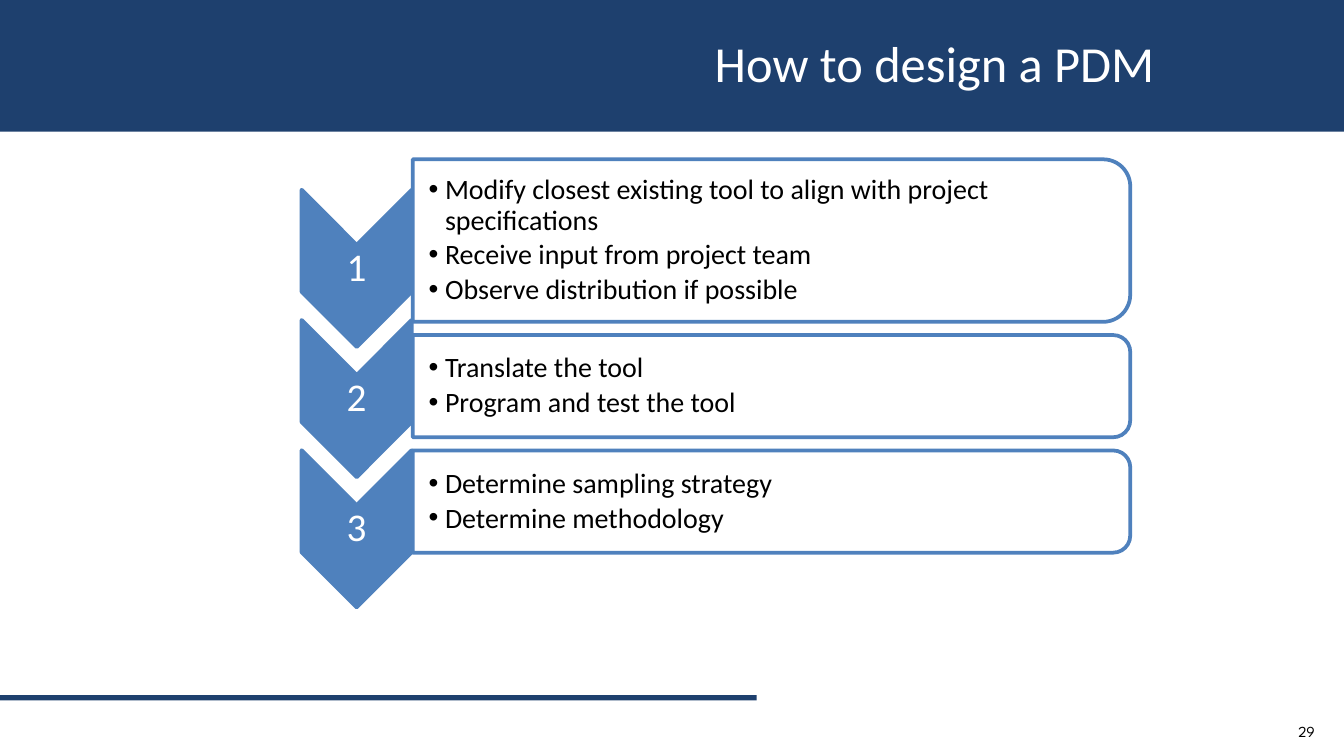
from dataclasses import dataclass
from typing import Any

import lxml.etree
import pptx
import pptx.dml.color
import pptx.enum.shapes
import pptx.enum.text
import pptx.oxml.ns
import pptx.util

NAVY = pptx.dml.color.RGBColor(0x1E, 0x40, 0x6E)
BLUE = pptx.dml.color.RGBColor(0x4F, 0x81, 0xBD)
WHITE = pptx.dml.color.RGBColor(0xFF, 0xFF, 0xFF)
BLACK = pptx.dml.color.RGBColor(0, 0, 0)

Cm = pptx.util.Cm
Pt = pptx.util.Pt
SHAPES = pptx.enum.shapes.MSO_SHAPE
ALIGN = pptx.enum.text.PP_ALIGN
ANCHOR = pptx.enum.text.MSO_ANCHOR
AUTO_SIZE = pptx.enum.text.MSO_AUTO_SIZE

TITLE_FONT = {"name": "Calibri", "size": Pt(27), "bold": False}
NUMBER_FONT = {"name": "Calibri", "size": Pt(21)}
LIST_FONT = {"name": "Calibri", "size": Pt(15), "bold": False}
PAGE_FONT = {"name": "League Spartan", "size": Pt(8.2)}
TITLE_FRAME = {
    "word_wrap": True, "vertical_anchor": ANCHOR.TOP,
    "auto_size": AUTO_SIZE.SHAPE_TO_FIT_TEXT,
}
PAGE_FRAME = {"word_wrap": True, "vertical_anchor": ANCHOR.MIDDLE}
LIST_FRAME = {
    "word_wrap": True, "auto_size": AUTO_SIZE.NONE, "vertical_anchor": ANCHOR.MIDDLE,
    "margin_left": Cm(0.3), "margin_right": Cm(0.03),
    "margin_top": Cm(0.03), "margin_bottom": Cm(0.03),
}
NUMBER_FRAME = {**LIST_FRAME, "margin_left": Cm(0.03)}
LIST_PARAGRAPH = {
    "alignment": ALIGN.LEFT, "line_spacing": 0.9,
    "space_before": Pt(0), "space_after": Pt(2.4),
}
NUMBER_PARAGRAPH = {"alignment": ALIGN.CENTER, "line_spacing": 0.9, "space_after": Pt(7)}

CHEVRON_CENTER_X = 6.74
FIRST_CHEVRON_Y = 5.07
CHEVRON_PITCH = 2.46
CHEVRON_LENGTH = 2.97
CHEVRON_WIDTH = 2.08
NUMBER_HEIGHT = 0.9
PANEL_LEFT = 7.8
PANEL_WIDTH = 13.56
PANEL_TOP = 3.01
PANEL_GAP = 0.25
LIST_WIDTH = 13.42
LIST_INSET = 0.1


@dataclass(frozen=True)
class Box:
    left: float
    top: float
    width: float
    height: float

    def lengths(self) -> tuple[int, ...]:
        return tuple(Cm(value) for value in (self.left, self.top, self.width, self.height))


@dataclass(frozen=True)
class Step:
    placeholder: int
    panel_height: float
    items: tuple[str, ...]


STEPS = (
    Step(1, 3.07, (
        "Modify closest existing tool to align with project specifications",
        "Receive input from project team",
        "Observe distribution if possible",
    )),
    Step(2, 1.93, ("Translate the tool", "Program and test the tool")),
    Step(3, 1.93, ("Determine sampling strategy", "Determine methodology")),
)


def set_format(target: Any, values: dict[str, Any]) -> None:
    for name, value in values.items():
        setattr(target, name, value)


def write(paragraph: Any, text: str, font: dict[str, Any], color: Any) -> None:
    run = paragraph.add_run()
    run.text = text
    set_format(run.font, font)
    run.font.color.rgb = color


def add_filled(slide: Any, kind: Any, box: Box, fill: Any, line: Any = None) -> Any:
    shape = slide.shapes.add_shape(kind, *box.lengths())
    shape.shadow.inherit = False
    shape.fill.solid()
    shape.fill.fore_color.rgb = fill
    if line is None:
        shape.line.fill.background()
    else:
        shape.line.color.rgb = line
        shape.line.width = Pt(2)
    return shape


def add_turned(slide: Any, kind: Any, center_x: float, center_y: float,
               width: float, height: float, fill: Any) -> Any:
    box = Box(center_x - width / 2, center_y - height / 2, width, height)
    shape = add_filled(slide, kind, box, fill, BLUE)
    shape.rotation = 90
    return shape


def add_label(slide: Any, box: Box, text: str, frame: dict[str, Any],
              paragraph_format: dict[str, Any], font: dict[str, Any], color: Any) -> None:
    label = slide.shapes.add_textbox(*box.lengths())
    set_format(label.text_frame, frame)
    paragraph = label.text_frame.paragraphs[0]
    set_format(paragraph, paragraph_format)
    write(paragraph, text, font, color)


def place(slide: Any, placeholder: Any, box: Box) -> None:
    placeholder.left, placeholder.top, placeholder.width, placeholder.height = box.lengths()
    slide.shapes._spTree.append(placeholder._element)


def set_opacity(shape: Any, percent: int) -> None:
    color = shape._element.spPr.find(".//" + pptx.oxml.ns.qn("a:srgbClr"))
    alpha = lxml.etree.SubElement(color, pptx.oxml.ns.qn("a:alpha"))
    alpha.set("val", str(percent * 1000))


def add_bullet(paragraph: Any) -> None:
    properties = paragraph._p.get_or_add_pPr()
    properties.set("marL", str(Cm(0.31)))
    properties.set("indent", str(-Cm(0.31)))
    bullet = lxml.etree.SubElement(properties, pptx.oxml.ns.qn("a:buChar"))
    bullet.set("char", "•")


def fill_list(slide: Any, placeholder: Any, box: Box, items: tuple[str, ...]) -> None:
    place(slide, placeholder, box)
    frame = placeholder.text_frame
    set_format(frame, LIST_FRAME)
    for index, item in enumerate(items):
        paragraph = frame.add_paragraph() if index else frame.paragraphs[0]
        add_bullet(paragraph)
        set_format(paragraph, LIST_PARAGRAPH)
        write(paragraph, item, LIST_FONT, BLACK)


def add_steps(slide: Any, placeholders: dict[int, Any]) -> None:
    panel_top = PANEL_TOP
    for index, step in enumerate(STEPS):
        chevron_y = FIRST_CHEVRON_Y + index * CHEVRON_PITCH
        add_turned(slide, SHAPES.CHEVRON, CHEVRON_CENTER_X, chevron_y,
                   CHEVRON_LENGTH, CHEVRON_WIDTH, BLUE)
        number_box = Box(CHEVRON_CENTER_X - CHEVRON_WIDTH / 2, chevron_y - NUMBER_HEIGHT / 2,
                         CHEVRON_WIDTH, NUMBER_HEIGHT)
        add_label(slide, number_box, str(index + 1), NUMBER_FRAME,
                  NUMBER_PARAGRAPH, NUMBER_FONT, WHITE)
        panel = add_turned(slide, SHAPES.ROUND_2_SAME_RECTANGLE,
                           PANEL_LEFT + PANEL_WIDTH / 2, panel_top + step.panel_height / 2,
                           step.panel_height, PANEL_WIDTH, WHITE)
        set_opacity(panel, 90)
        list_box = Box(PANEL_LEFT, panel_top + LIST_INSET,
                       LIST_WIDTH, step.panel_height - 2 * LIST_INSET)
        fill_list(slide, placeholders[step.placeholder], list_box, step.items)
        panel_top += step.panel_height + PANEL_GAP


def main() -> None:
    presentation = pptx.Presentation()
    presentation.slide_width = Cm(25.4)
    presentation.slide_height = Cm(14.28)
    slide = presentation.slides.add_slide(presentation.slide_layouts[4])
    placeholders = {item.placeholder_format.idx: item for item in slide.placeholders}

    add_filled(slide, SHAPES.RECTANGLE, Box(0, 0, 25.4, 2.49), NAVY)
    add_filled(slide, SHAPES.RECTANGLE, Box(0, 13.13, 14.3, 0.1), NAVY)
    add_label(slide, Box(19.18, 13.44, 5.92, 0.76), "29", PAGE_FRAME,
              {"alignment": ALIGN.RIGHT}, PAGE_FONT, BLACK)

    title = placeholders[0]
    place(slide, title, Box(11.35, 0.48, 10.72, 1.42))
    set_format(title.text_frame, TITLE_FRAME)
    title_paragraph = title.text_frame.paragraphs[0]
    title_paragraph.alignment = ALIGN.RIGHT
    write(title_paragraph, "How to design a PDM", TITLE_FONT, WHITE)

    add_steps(slide, placeholders)
    unused = placeholders[4]._element
    unused.getparent().remove(unused)
    presentation.save("out.pptx")


if __name__ == "__main__":
    main()
